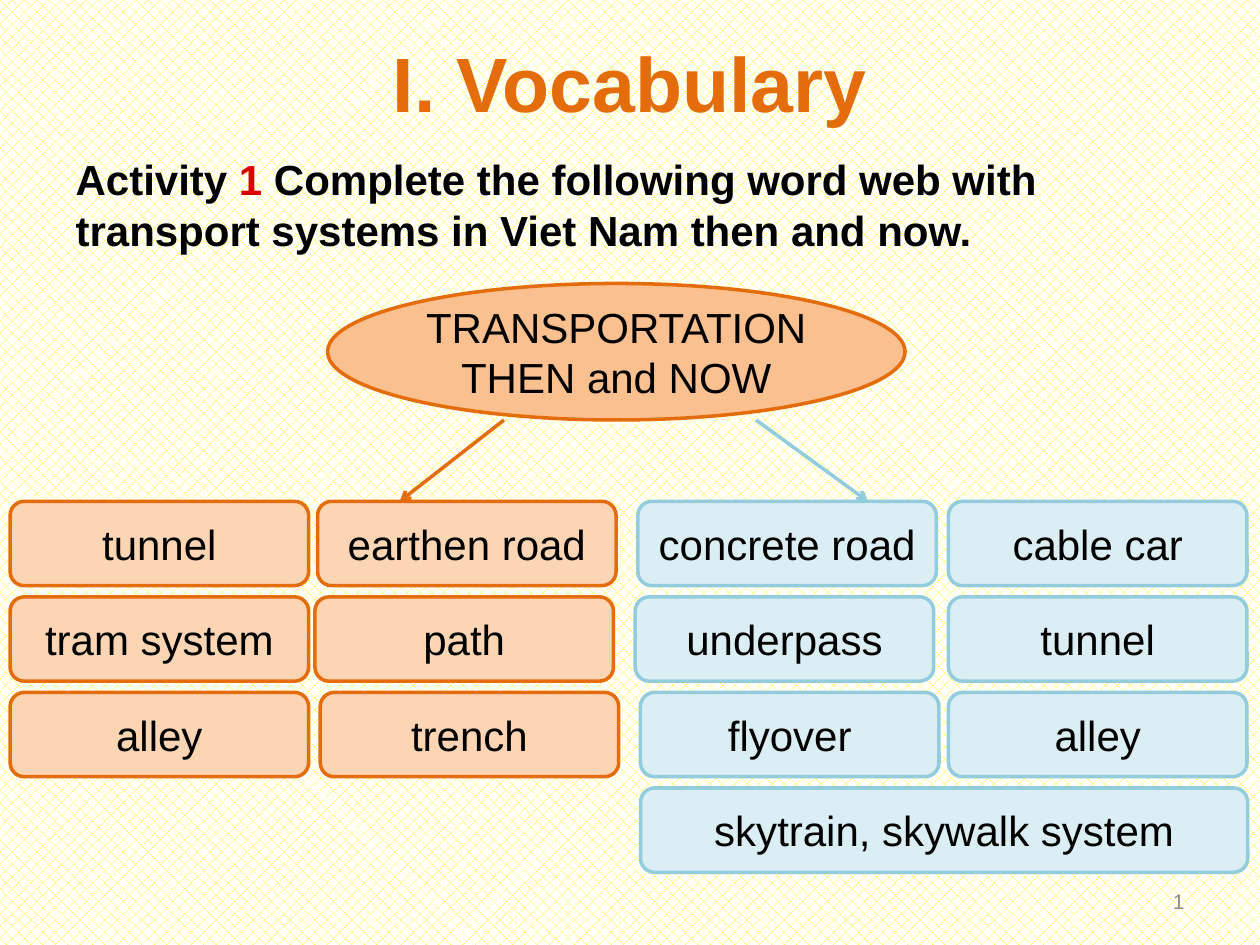
"""Build the vocabulary word web slide on transport systems then and now."""
from typing import NamedTuple

from lxml.etree import SubElement
from pptx import Presentation
from pptx.dml.color import RGBColor
from pptx.enum.dml import MSO_PATTERN
from pptx.enum.shapes import MSO_CONNECTOR, MSO_SHAPE
from pptx.enum.text import MSO_ANCHOR, PP_ALIGN
from pptx.oxml.ns import qn
from pptx.util import Pt

COLORS = {
    "orange": "E46C0A", "peach": "FAC090", "pale_peach": "FCD5B5",
    "blue": "93CDDD", "pale_blue": "DBEEF4", "red": "DA0000",
    "black": "000000", "gray": "8C8C8C", "yellow": "FFFF00", "white": "FFFFFF",
}
BOX_W, BOX_H = 170.6, 48.2
TOP, ROW_STEP = 286.5, 54.6
STAGGER = (1.5, 0, 3)
LEVEL = (0, 0, 0)


class Column(NamedTuple):
    left: float
    words: tuple[str, ...]
    offsets: tuple[float, ...]
    fill: str
    line: str


class Arrow(NamedTuple):
    x1: float
    x2: float
    color: str


COLUMNS = (
    Column(5.8, ("tunnel", "tram system", "alley"), LEVEL, "pale_peach", "orange"),
    Column(180, ("earthen road", "path", "trench"), STAGGER, "pale_peach", "orange"),
    Column(363, ("concrete road", "underpass", "flyover"), STAGGER, "pale_blue", "blue"),
    Column(542, ("cable car", "tunnel", "alley"), LEVEL, "pale_blue", "blue"),
)
ARROWS = (Arrow(288, 228.5, "orange"), Arrow(432, 496, "blue"))


def rgb(name: str) -> RGBColor:
    return RGBColor.from_string(COLORS[name])


def place(sp, left: float, top: float, width: float, height: float) -> None:
    sp.left, sp.top, sp.width, sp.height = map(Pt, (left, top, width, height))


def add_text(p, text: str, size: float = 24, color: str = "black",
             bold: bool = False, align=None) -> None:
    if align is not None:
        p.alignment = align
    r = p.add_run()
    r.text = text
    r.font.name = "Arial"
    r.font.size = Pt(size)
    r.font.bold = bold
    r.font.color.rgb = rgb(color)


def add_node(slide, kind, text: str, left: float, top: float, width: float,
             height: float, fill: str, line: str) -> None:
    sp = slide.shapes.add_shape(kind, *map(Pt, (left, top, width, height)))
    sp.shadow.inherit = False
    sp.fill.solid()
    sp.fill.fore_color.rgb = rgb(fill)
    sp.line.color.rgb = rgb(line)
    sp.line.width = Pt(2)
    tf = sp.text_frame
    tf.word_wrap = True
    tf.vertical_anchor = MSO_ANCHOR.MIDDLE
    add_text(tf.paragraphs[0], text, align=PP_ALIGN.CENTER)


def add_arrow(slide, arrow: Arrow) -> None:
    sp = slide.shapes.add_connector(
        MSO_CONNECTOR.STRAIGHT, Pt(arrow.x1), Pt(240), Pt(arrow.x2), Pt(TOP))
    sp.line.color.rgb = rgb(arrow.color)
    sp.line.width = Pt(2)
    SubElement(sp.line._get_or_add_ln(), qn("a:tailEnd"), type="arrow")
    SubElement(sp._element.spPr, qn("a:effectLst"))


def add_headings(slide) -> None:
    title, body = slide.placeholders
    place(title, 36, 14.4, 648, 64.8)
    add_text(title.text_frame.paragraphs[0], "I. Vocabulary", size=44,
             color="orange", bold=True, align=PP_ALIGN.CENTER)
    place(body, 36, 84.2, 648, 444)
    p = body.text_frame.paragraphs[0]
    pPr = p._p.get_or_add_pPr()
    pPr.set("marL", "0")
    pPr.set("indent", "0")
    SubElement(pPr, qn("a:buNone"))
    add_text(p, "Activity", bold=True)
    add_text(p, " 1 ", color="red", bold=True)
    add_text(p, "Complete the following word web with transport systems "
                "in Viet Nam then and now.", bold=True)


def add_page_number(slide) -> None:
    sp = slide.shapes.add_textbox(Pt(516), Pt(500.5), Pt(168), Pt(28.8))
    tf = sp.text_frame
    tf.word_wrap = True
    tf.vertical_anchor = MSO_ANCHOR.MIDDLE
    add_text(tf.paragraphs[0], "1", size=12, color="gray", align=PP_ALIGN.RIGHT)


def main() -> None:
    prs = Presentation()
    prs.slide_width, prs.slide_height = Pt(720), Pt(540)
    slide = prs.slides.add_slide(prs.slide_layouts[1])
    bg = slide.background.fill
    bg.patterned()
    bg.pattern = MSO_PATTERN.PERCENT_30
    bg.fore_color.rgb = rgb("yellow")
    bg.back_color.rgb = rgb("white")

    add_headings(slide)
    add_page_number(slide)
    add_node(slide, MSO_SHAPE.OVAL, "TRANSPORTATION THEN and NOW",
             187.2, 162, 330, 78, "peach", "orange")
    for col in COLUMNS:
        for row, (word, offset) in enumerate(zip(col.words, col.offsets)):
            add_node(slide, MSO_SHAPE.ROUNDED_RECTANGLE, word, col.left + offset,
                     TOP + row * ROW_STEP, BOX_W, BOX_H, col.fill, col.line)
    add_node(slide, MSO_SHAPE.ROUNDED_RECTANGLE, "skytrain, skywalk system",
             366, TOP + 3 * ROW_STEP, 347, BOX_H, "pale_blue", "blue")
    for arrow in ARROWS:
        add_arrow(slide, arrow)
    prs.save("out.pptx")


if __name__ == "__main__":
    main()
